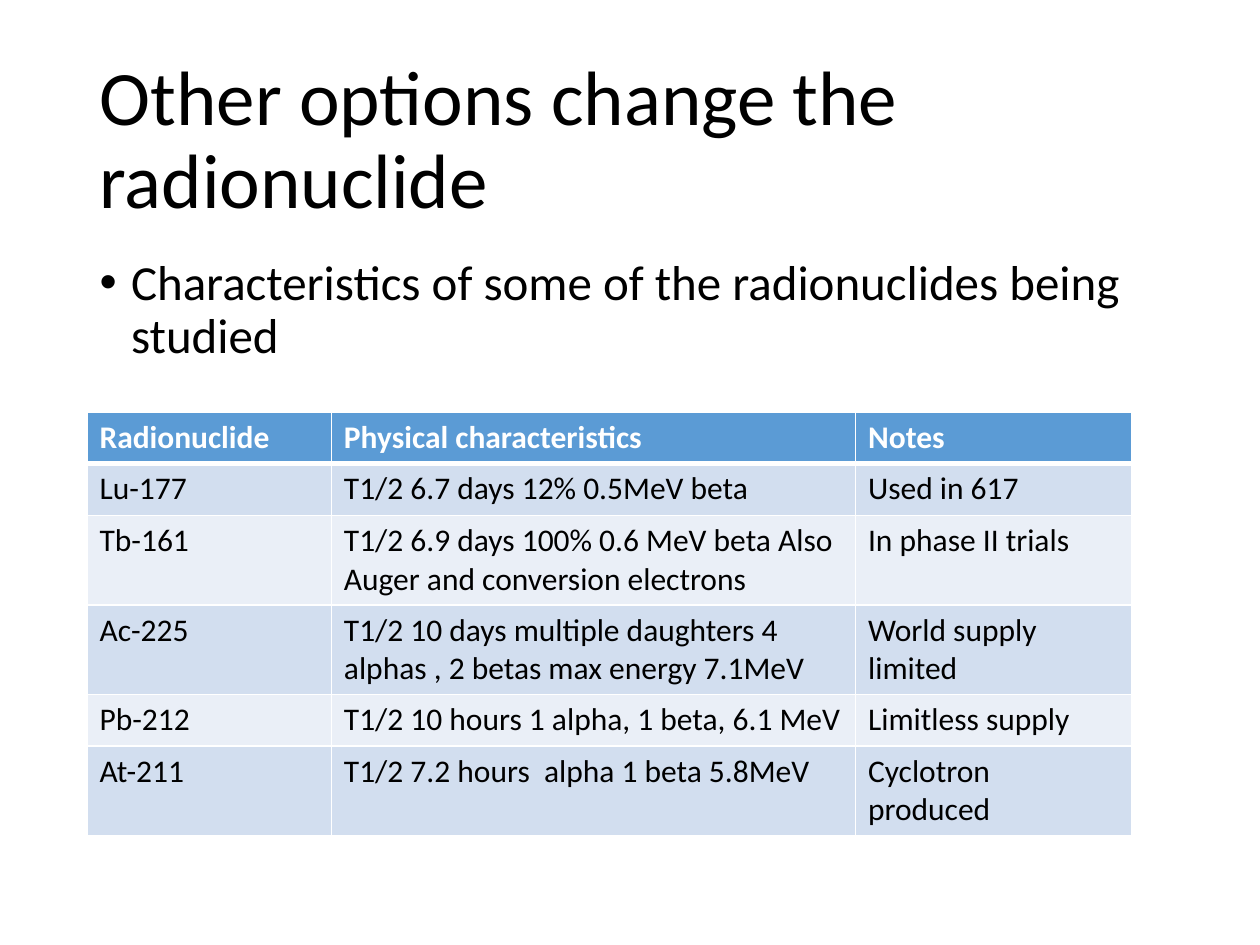
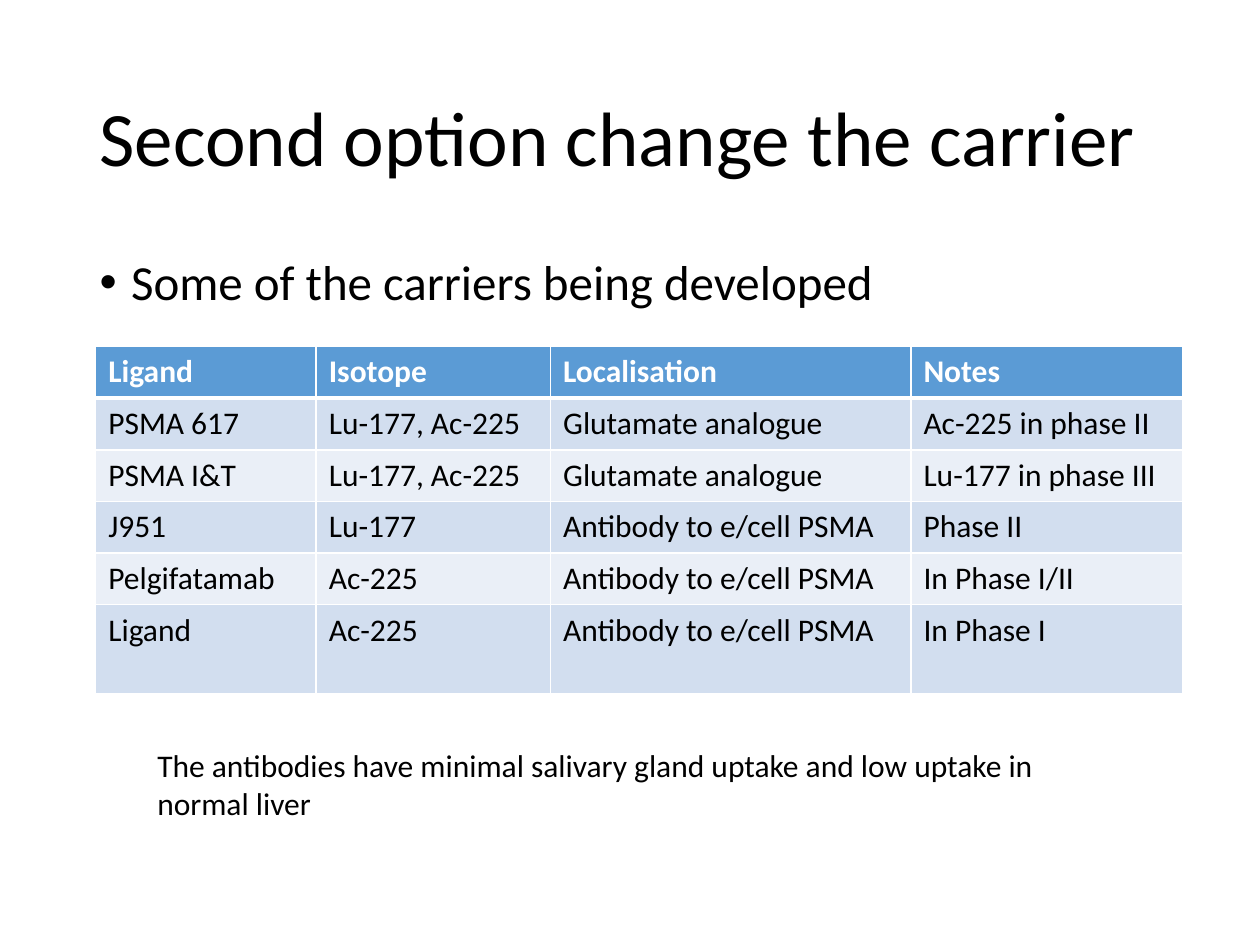
"""Build two slides on radionuclide and carrier options."""
import dataclasses

import lxml.etree
import pptx
import pptx.dml.color
import pptx.enum.text
import pptx.oxml.ns
import pptx.util

Inches = pptx.util.Inches
Pt = pptx.util.Pt


@dataclasses.dataclass(frozen=True)
class Theme:
    """Hold the colours, type sizes and font of the deck."""
    font: str = "Calibri"
    ink: str = "000000"
    paper: str = "FFFFFF"
    header: str = "5B9BD5"
    bands: tuple = ("D2DEEF", "EAEFF7")
    title_size: int = 44
    body_size: int = 28
    small_size: int = 18


THEME = Theme()
TITLE_BOX = (0.69, 0.4, 8.62, 1.45)
BODY_BOX = (0.69, 2, 8.62, 4.76)
ROW_HEIGHT = 0.41
TALL_ROW_HEIGHT = 0.71

RADIONUCLIDES = [
    ("Radionuclide", "Physical characteristics", "Notes"),
    ("Lu-177", "T1/2 6.7 days 12% 0.5MeV beta", "Used in 617"),
    ("Tb-161", "T1/2 6.9 days 100% 0.6 MeV beta Also Auger and conversion electrons",
     "In phase II trials"),
    ("Ac-225", "T1/2 10 days multiple daughters 4 alphas , 2 betas max energy 7.1MeV",
     "World supply limited"),
    ("Pb-212", "T1/2 10 hours 1 alpha, 1 beta, 6.1 MeV", "Limitless supply"),
    ("At-211", "T1/2 7.2 hours  alpha 1 beta 5.8MeV", "Cyclotron produced"),
]
CARRIERS = [
    ("Ligand", "Isotope", "Localisation", "Notes"),
    ("PSMA 617", "Lu-177, Ac-225", "Glutamate analogue", "Ac-225 in phase II"),
    ("PSMA I&T", "Lu-177, Ac-225", "Glutamate analogue", "Lu-177 in phase III"),
    ("J951", "Lu-177", "Antibody to e/cell PSMA", "Phase II"),
    ("Pelgifatamab", "Ac-225", "Antibody to e/cell PSMA", "In Phase I/II"),
    ("Ligand", "Ac-225", "Antibody to e/cell PSMA", "In Phase I"),
]


def write_text(frame, text, size, colour=THEME.ink, bold=False):
    """Fill a text frame with one formatted paragraph and return it."""
    frame.text = text
    para = frame.paragraphs[0]
    for span in para.runs:
        span.font.name = THEME.font
        span.font.size = Pt(size)
        span.font.bold = bold
        span.font.color.rgb = pptx.dml.color.RGBColor.from_string(colour)
    return para


def fill_placeholder(placeholder, box, text, size):
    """Move a placeholder to its box and write left-aligned text in it."""
    placeholder.left, placeholder.top, placeholder.width, placeholder.height = map(Inches, box)
    para = write_text(placeholder.text_frame, text, size)
    placeholder.text_frame.auto_size = pptx.enum.text.MSO_AUTO_SIZE.NONE
    para.alignment = pptx.enum.text.PP_ALIGN.LEFT
    para.line_spacing = 0.9
    para.space_before = Pt(0)
    return para


def add_page(deck, title, bullet):
    """Add a slide with its title and one bullet."""
    page = deck.slides.add_slide(deck.slide_layouts[1])
    fill_placeholder(page.shapes.title, TITLE_BOX, title, THEME.title_size)
    para = fill_placeholder(page.placeholders[1], BODY_BOX, bullet, THEME.body_size)
    properties = para._p.get_or_add_pPr()
    properties.set("marL", str(Inches(0.25)))
    properties.set("indent", str(Inches(-0.25)))
    return page


def draw_borders(cell, bottom_width):
    """Give a cell white borders, with its own width at the bottom."""
    properties = cell._tc.get_or_add_tcPr()
    qualified = pptx.oxml.ns.qn
    for side, width in (("L", 1), ("R", 1), ("T", 1), ("B", bottom_width)):
        line = lxml.etree.SubElement(properties, qualified(f"a:ln{side}"), w=str(Pt(width)))
        fill = lxml.etree.SubElement(line, qualified("a:solidFill"))
        lxml.etree.SubElement(fill, qualified("a:srgbClr"), val=THEME.paper)


def add_banded_table(page, left, top, column_widths, rows, tall_rows):
    """Add a table with a header row and alternating bands."""
    heights = [TALL_ROW_HEIGHT if index in tall_rows else ROW_HEIGHT
               for index in range(len(rows))]
    table = page.shapes.add_table(
        len(rows), len(column_widths), Inches(left), Inches(top),
        Inches(sum(column_widths)), Inches(sum(heights))).table
    for column, width in zip(table.columns, column_widths):
        column.width = Inches(width)
    for index, (row, height, texts) in enumerate(zip(table.rows, heights, rows)):
        row.height = Inches(height)
        is_header = index == 0
        band = THEME.header if is_header else THEME.bands[(index - 1) % 2]
        colour = THEME.paper if is_header else THEME.ink
        for cell, text in zip(row.cells, texts):
            draw_borders(cell, 3 if is_header else 1)
            cell.fill.solid()
            cell.fill.fore_color.rgb = pptx.dml.color.RGBColor.from_string(band)
            write_text(cell.text_frame, text, THEME.small_size, colour, is_header)


def add_remark(page, box, text):
    """Add a wrapped text box with a closing remark."""
    frame = page.shapes.add_textbox(*map(Inches, box)).text_frame
    frame.word_wrap = True
    write_text(frame, text, THEME.small_size)


def build_radionuclide_page(deck):
    """Build the slide that compares radionuclides."""
    page = add_page(deck, "Other options change the radionuclide",
                    "Characteristics of some of the radionuclides being studied")
    add_banded_table(page, 0.69, 3.27, (1.94, 4.16, 2.19), RADIONUCLIDES, (2, 3, 5))


def build_carrier_page(deck):
    """Build the slide that compares carriers."""
    page = add_page(deck, "Second option change the carrier",
                    "Some of the carriers being developed")
    add_banded_table(page, 0.76, 2.75, (1.75, 1.86, 2.86, 2.16), CARRIERS, (5,))
    add_remark(page, (1.15, 5.87, 7.56, 0.71),
               "The antibodies have minimal salivary gland uptake "
               "and low uptake in normal liver")


def main():
    """Build and save the deck."""
    deck = pptx.Presentation()
    deck.slide_width, deck.slide_height = Inches(10), Inches(7.5)
    build_radionuclide_page(deck)
    build_carrier_page(deck)
    deck.save("out.pptx")


if __name__ == "__main__":
    main()
